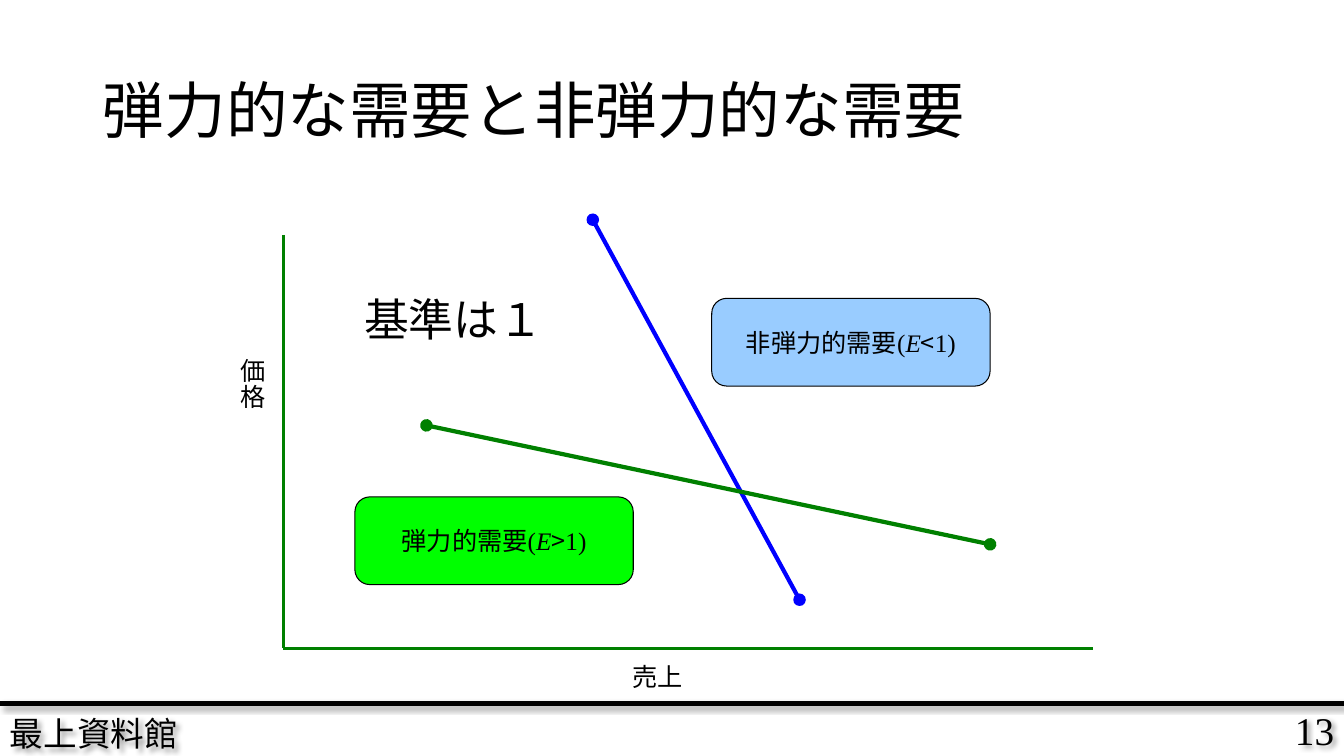
"""Build the slide on elastic and inelastic demand."""
import pptx
import pptx.util
import pptx.dml.color
import pptx.enum.shapes
import pptx.enum.text
import pptx.oxml.ns
import lxml.etree

WIDE, HIGH = 13.33, 7.5
SERIF, SANS = "Times New Roman", "Noto Sans CJK JP"
HUES = {"ink": "000000", "axis": "008000", "steep": "0000FF",
        "sky": "99CCFF", "lime": "00FF00", "paper": "FFFFFF"}
ALIGN = pptx.enum.text.PP_ALIGN
ANCHOR = pptx.enum.text.MSO_ANCHOR
KINDS = pptx.enum.shapes

TITLE = ("弾力的な需要と非弾力的な需要", (6.9, 5.33, 86.27, 19.33))
LEFT, TOP, RIGHT, BASE, RULE = 21.08, 31.07, 81.32, 85.73, 93.07

# Places are percentages of the slide's width and height.
TEXTS = [
    {"text": "13", "at": (86.65, RULE, 13.35, 6.8), "size": 28,
     "align": ALIGN.RIGHT, "anchor": ANCHOR.MIDDLE, "shade": True},
    {"text": "最上資料館", "at": (0, 94, 27, 6), "size": 24,
     "anchor": ANCHOR.MIDDLE, "shade": True},
    {"text": "売上", "at": (46.29, 86.8, 5.25, 5.33), "size": 18, "wrap": False},
    {"text": "価格", "at": (16.43, 46.13, 3.83, 8.13), "size": 18,
     "wrap": False, "vert": "eaVert"},
    {"text": "基準は１", "at": (24.91, 36.93, 17.7, 10.53), "size": 32,
     "align": ALIGN.CENTER, "anchor": ANCHOR.MIDDLE},
]
LINES = [
    {"ends": (0, RULE, 100, RULE), "hue": "ink", "width": 3, "shade": True},
    {"ends": (LEFT, TOP, LEFT, BASE), "hue": "axis", "width": 2},
    {"ends": (LEFT, BASE, RIGHT, BASE), "hue": "axis", "width": 2},
    {"ends": (44.11, 29.07, 59.49, 79.33), "hue": "steep", "width": 3, "dots": True},
    {"ends": (31.73, 56.27, 73.67, 72), "hue": "axis", "width": 3, "dots": True},
]
CARD = (20.71, 11.6)
CARDS = [("非弾力的需要(", "<", "sky", (52.96, 39.47)),
         ("弾力的需要(", ">", "lime", (26.41, 65.73))]


def place(box):
    """Turn percentages of the slide into lengths."""
    return [pptx.util.Inches(part * side / 100)
            for part, side in zip(box, (WIDE, HIGH) * 2)]


def tint(name):
    """Look up a colour."""
    return pptx.dml.color.RGBColor.from_string(HUES[name])


def node(home, tag, **attrs):
    """Add a drawing element."""
    return lxml.etree.SubElement(home, pptx.oxml.ns.qn("a:" + tag), attrs)


def shade(item, on):
    """Add a soft shadow, or an empty effect list."""
    list_ = node(item._element.spPr, "effectLst")
    if on:
        cast = node(list_, "outerShdw", blurRad="50800", dist="38100",
                    dir="2700000", algn="tl", rotWithShape="0")
        node(node(cast, "srgbClr", val=HUES["ink"]), "alpha", val="40000")


def write(frame, runs, size, align=None, **form):
    """Fill a frame with runs of (text, font, italic)."""
    for key, value in form.items():
        setattr(frame, key, value)
    para = frame.paragraphs[0]
    para.alignment = align
    for text, face, slant in runs:
        run = para.add_run()
        run.text = text
        run.font.color.rgb = tint("ink")
        look = {"name": face, "size": pptx.util.Pt(size), "italic": slant}
        for key, value in look.items():
            setattr(run.font, key, value)
        node(run._r.get_or_add_rPr(), "ea", typeface=SANS)
    return para


def add_text(slide, entry):
    """Add a label."""
    box = slide.shapes.add_textbox(*place(entry["at"]))
    write(box.text_frame, [(entry["text"], SERIF, False)], entry["size"],
          entry.get("align"), word_wrap=entry.get("wrap", True),
          vertical_anchor=entry.get("anchor", ANCHOR.TOP))
    if "vert" in entry:
        box.text_frame._txBody.bodyPr.set("vert", entry["vert"])
    if "shade" in entry:
        shade(box, True)


def add_line(slide, entry):
    """Add a rule, an axis or a demand curve."""
    line = slide.shapes.add_connector(
        KINDS.MSO_CONNECTOR.STRAIGHT, *place(entry["ends"]))
    line.line.color.rgb = tint(entry["hue"])
    line.line.width = pptx.util.Pt(entry["width"])
    if "dots" in entry:
        stroke = line.line._get_or_add_ln()
        for tag in ("headEnd", "tailEnd"):
            node(stroke, tag, type="oval")
    shade(line, "shade" in entry)


def add_card(slide, name, sign, hue, spot):
    """Add a rounded card that names a curve."""
    card = slide.shapes.add_shape(
        KINDS.MSO_SHAPE.ROUNDED_RECTANGLE, *place(spot + CARD))
    card.adjustments[0] = 0.17
    card.shadow.inherit = False
    card.fill.solid()
    card.fill.fore_color.rgb = tint(hue)
    card.line.color.rgb = tint("ink")
    card.line.width = pptx.util.Pt(0.75)
    runs = [(name, SERIF, False), ("E", SERIF, True),
            (sign, SANS, False), ("1)", SERIF, False)]
    write(card.text_frame, runs, 18, ALIGN.CENTER, word_wrap=False,
          vertical_anchor=ANCHOR.MIDDLE)


def main():
    """Build and save the slide."""
    deck = pptx.Presentation()
    deck.slide_width, deck.slide_height = place((100, 100))
    slide = deck.slides.add_slide(deck.slide_layouts[5])
    slide.background.fill.solid()
    slide.background.fill.fore_color.rgb = tint("paper")
    text, box = TITLE
    title = slide.shapes.title
    for key, value in zip(("left", "top", "width", "height"), place(box)):
        setattr(title, key, value)
    para = write(title.text_frame, [(text, SANS, False)], 44, ALIGN.LEFT,
                 word_wrap=True, vertical_anchor=ANCHOR.MIDDLE)
    para.line_spacing = 0.9
    for entry in LINES:
        add_line(slide, entry)
    for entry in TEXTS:
        add_text(slide, entry)
    for entry in CARDS:
        add_card(slide, *entry)
    deck.save("out.pptx")


if __name__ == "__main__":
    main()
